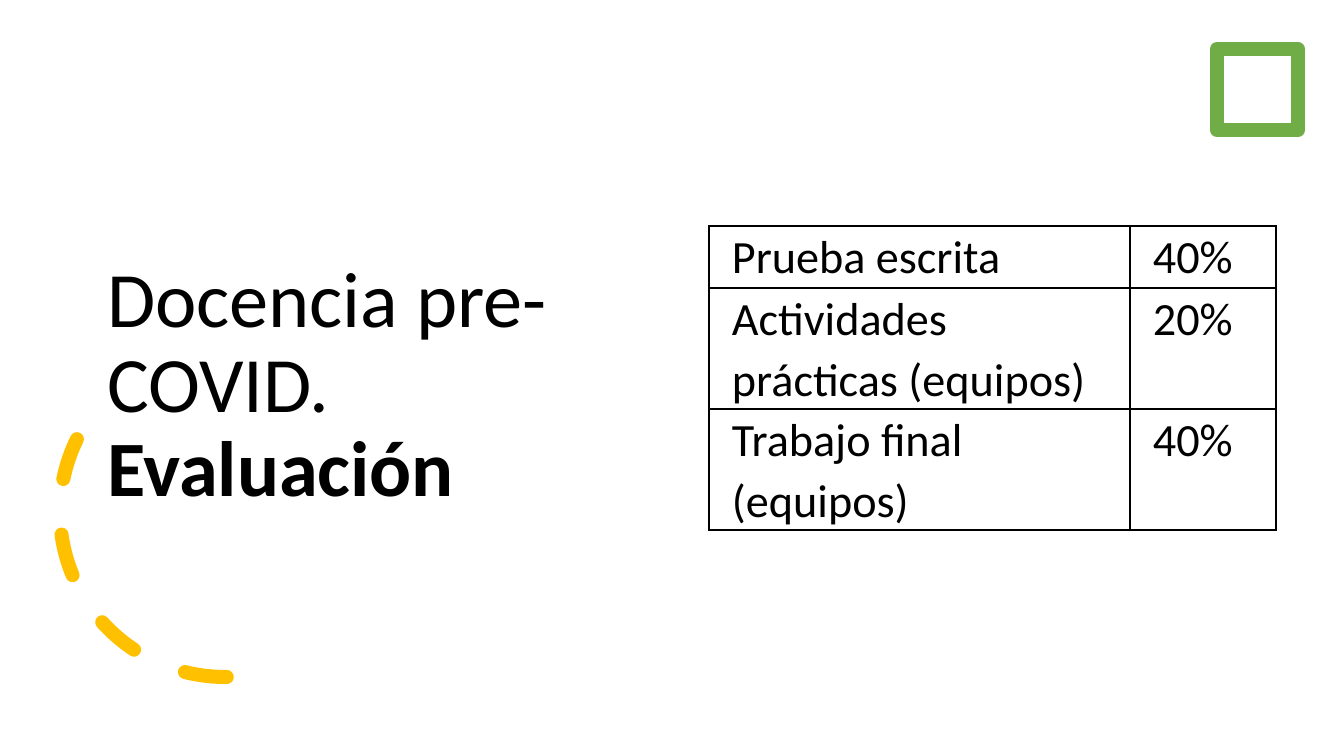
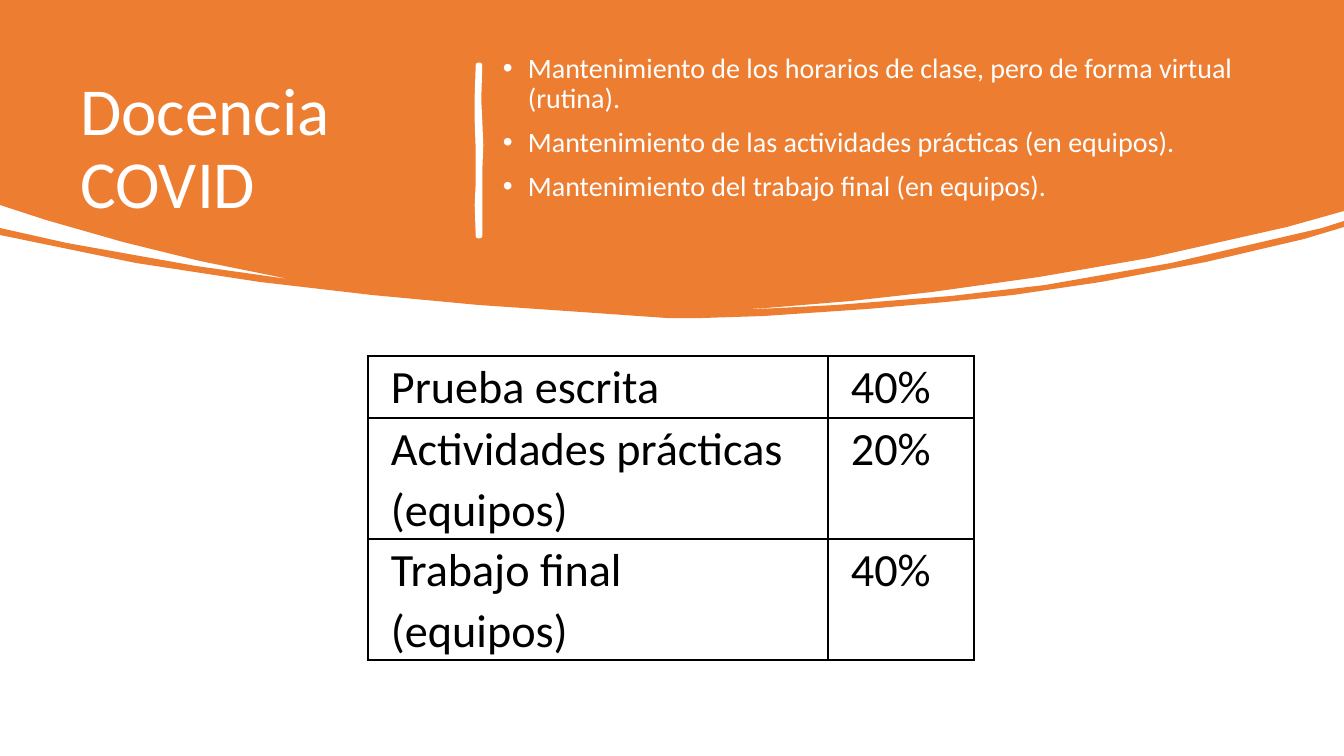
from lxml import etree
from pptx import Presentation
from pptx import util as u
from pptx.dml.color import RGBColor
from pptx.enum import dml, shapes, text
from pptx.oxml import parse_xml
from pptx.oxml.ns import nsdecls, qn

PX = 9071  # EMU in one px, 100.8 px to the inch
FONT = "Calibri"
BLACK, WHITE = "000000", "FFFFFF"
ORANGE, GREEN, YELLOW = "ED7D31", "70AD47", "FFC000"


def rgb(color):
    return RGBColor.from_string(color)


def write(p, words, size, color=BLACK, bold=False, spacing=0.9, before=0):
    """Add a run to paragraph p and set the paragraph's alignment and spacing."""
    p.alignment = text.PP_ALIGN.LEFT
    p.line_spacing = spacing
    p.space_before = u.Pt(before)
    r = p.add_run()
    r.text = words
    r.font.name, r.font.size, r.font.bold = FONT, u.Pt(size), bold
    r.font.color.rgb = rgb(color)


prs = Presentation()
prs.slide_width, prs.slide_height = 1344 * PX, 756 * PX
before_covid, covid = [prs.slides.add_slide(prs.slide_layouts[5]) for _ in range(2)]

# Outlined ornaments of the first slide
ornaments = [
    (shapes.MSO_SHAPE.ARC, (60, 347, 330, 330), YELLOW),
    (shapes.MSO_SHAPE.RECTANGLE, (1217, 49, 81, 81), GREEN),
]
for kind, box, color in ornaments:
    sp = before_covid.shapes.add_shape(kind, *[v * PX for v in box])
    sp.shadow.inherit = False
    sp.fill.background()
    sp.line.color.rgb = rgb(color)
    sp.line.width = u.Pt(10)
    if kind == shapes.MSO_SHAPE.ARC:
        sp.adjustments[0], sp.adjustments[1] = 144.42, 0
        sp.rotation = 266.9
        sp.element.spPr.find(qn("a:xfrm")).set("flipH", "1")
        sp.line.dash_style = dml.MSO_LINE.DASH
    ln = sp.element.spPr.find(qn("a:ln"))
    ln.set("cap", "rnd")
    etree.SubElement(ln, qn("a:round"))

# Curved band and divider of the second slide
band = [
    (0, 0), (1344, 0),
    # lower edge of the band, right
    (1344, 211), (1287, 227), (1149, 258), (1039, 277), (932, 292), (851, 301),
    (766, 308), (749, 309),
    # upper edge of the stripe, right
    (759, 309), (836, 305), (951, 296), (1045, 285), (1171, 263), (1322, 228),
    (1344, 221),
    # lower edge of the stripe, right to left
    (1344, 227), (1304, 239), (1206, 262), (1101, 282), (1013, 295), (946, 302),
    (867, 309), (764, 316), (702, 318), (667, 318), (581, 312), (479, 305),
    (372, 295), (260, 282), (136, 263), (0, 235),
    # gap between stripe and band, left
    (0, 228), (67, 243), (196, 266), (288, 279), (284, 278), (200, 261),
    (123, 242), (46, 220), (0, 205),
]
divider = [
    (480, 65), (479, 100), (480, 120), (481, 145), (480, 172), (480, 236),
    (478, 236), (477, 205), (478, 182), (478, 150), (477, 122), (477, 95), (478, 65),
]
for points, color, width in [(band, ORANGE, 0), (divider, WHITE, 3.25)]:
    outline = covid.shapes.build_freeform(*points[0], scale=PX)
    outline.add_line_segments(points[1:], close=True)
    sp = outline.convert_to_shape()
    sp.shadow.inherit = False
    sp.fill.solid()
    sp.fill.fore_color.rgb = rgb(color)
    if width:
        sp.line.color.rgb = rgb(color)
        sp.line.width = u.Pt(width)
    else:
        sp.line.fill.background()

# Bulleted list of the second slide
measures = [
    "Mantenimiento de los horarios de clase, pero de forma virtual (rutina).",
    "Mantenimiento de las actividades prácticas (en equipos).",
    "Mantenimiento del trabajo final (en equipos).",
]
tf = covid.shapes.add_textbox(*[v * PX for v in (493, 48, 780, 161)]).text_frame
tf.word_wrap = True
tf.vertical_anchor = text.MSO_ANCHOR.MIDDLE
for i, measure in enumerate(measures):
    p = tf.add_paragraph() if i else tf.paragraphs[0]
    write(p, measure, 20, WHITE, before=10)
    pPr = p._p.get_or_add_pPr()
    pPr.set("marL", str(25 * PX))
    pPr.set("indent", str(-25 * PX))
    etree.SubElement(pPr, qn("a:buFont")).set("typeface", "Arial")
    etree.SubElement(pPr, qn("a:buChar")).set("char", "•")

# Title and grading table of each slide
grading = [
    ("Prueba escrita", "40%"),
    ("Actividades prácticas (equipos)", "20%"),
    ("Trabajo final (equipos)", "40%"),
]
row_heights = (62, 121, 121)
pages = [
    (before_covid, [("Docencia pre-COVID. ", False), ("Evaluación", True)],
     (97, 256, 606, 263), 56, BLACK, text.MSO_ANCHOR.BOTTOM, (709, 226), (421, 146)),
    (covid, [("Docencia COVID", False)],
     (70, 70, 397, 161), 48, WHITE, text.MSO_ANCHOR.MIDDLE, (368, 356), (460, 146)),
]
for s, runs, box, size, color, anchor, corner, col_widths in pages:
    title = s.shapes.title
    title.element.getparent().append(title.element)  # in front of the band
    title.left, title.top, title.width, title.height = [v * PX for v in box]
    tf = title.text_frame
    tf.auto_size = text.MSO_AUTO_SIZE.NONE
    tf.word_wrap = True
    tf.vertical_anchor = anchor
    for words, bold in runs:
        write(tf.paragraphs[0], words, size, color, bold)

    area = [v * PX for v in (*corner, sum(col_widths), sum(row_heights))]
    table = s.shapes.add_table(len(grading), 2, *area).table
    table.first_row = table.horz_banding = False
    for col, width in zip(table.columns, col_widths):
        col.width = width * PX
    for row, height, words in zip(table.rows, row_heights, grading):
        row.height = height * PX
        for cell, word in zip(row.cells, words):
            cell.margin_left = cell.margin_right = 23 * PX
            cell.margin_top = cell.margin_bottom = 0
            write(cell.text_frame.paragraphs[0], word, 33, spacing=1.07)
            tcPr = cell._tc.get_or_add_tcPr()
            for side in "LRTB":
                tcPr.append(parse_xml(
                    f'<a:ln{side} {nsdecls("a")} w="12700"><a:solidFill>'
                    f'<a:srgbClr val="{BLACK}"/></a:solidFill></a:ln{side}>'))
            cell.fill.background()

prs.save("out.pptx")
